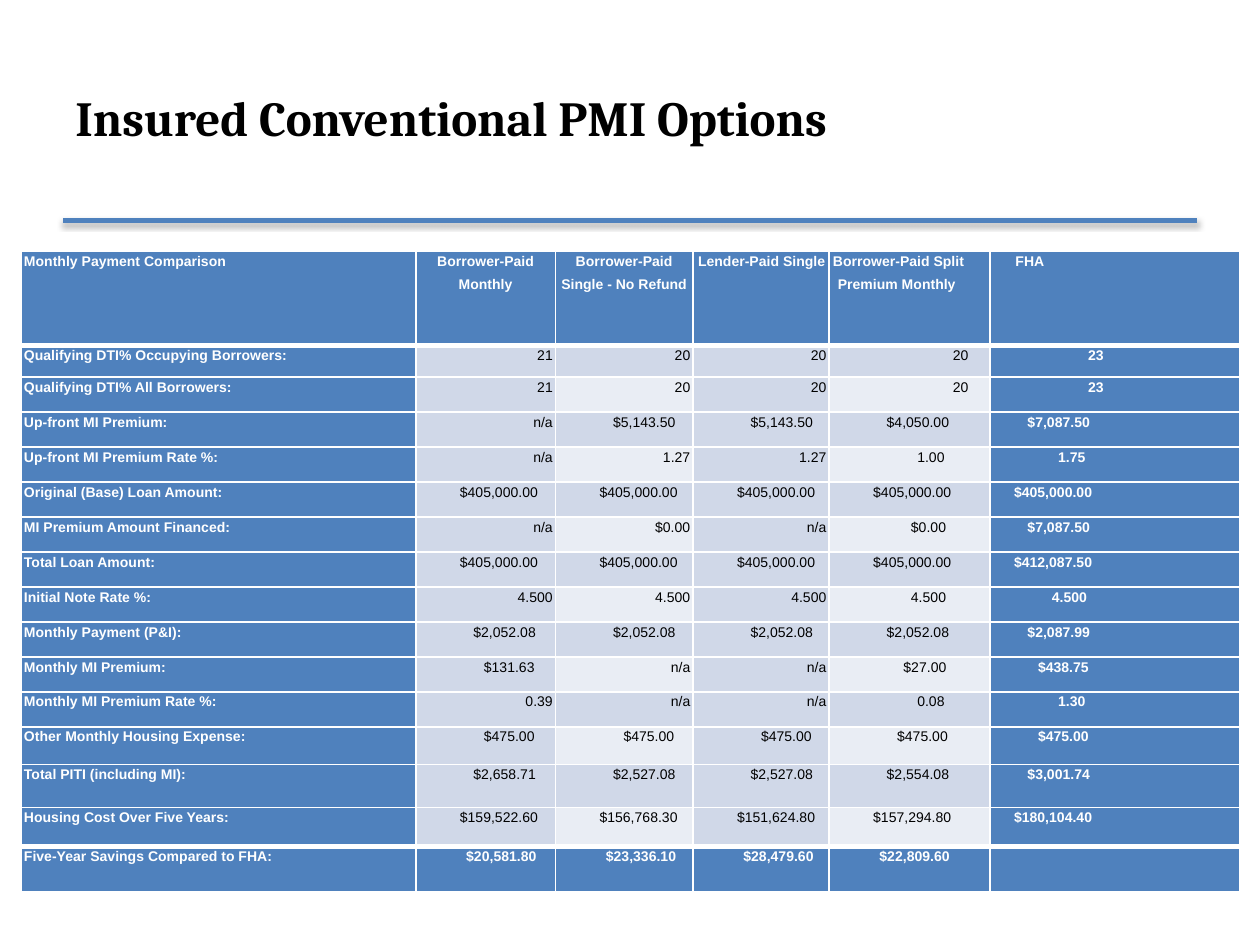
from lxml.etree import SubElement
from pptx import Presentation
from pptx.dml.color import RGBColor
from pptx.enum.shapes import MSO_CONNECTOR
from pptx.enum.text import MSO_ANCHOR, PP_ALIGN
from pptx.oxml.ns import qn
from pptx.util import Pt

BLUE = RGBColor(0x4F, 0x81, 0xBD)
BAND = RGBColor(0xD0, 0xD8, 0xE8)
LIGHT_BAND = RGBColor(0xE9, 0xED, 0xF4)
WHITE = RGBColor(0xFF, 0xFF, 0xFF)
BLACK = RGBColor(0, 0, 0)

COLUMN_WIDTHS = [225.3, 79.8, 78.6, 77.8, 92.1, 142.6]
ROW_HEIGHTS = [54, 18] + [20] * 10 + [21.6, 24.6, 22.2, 26]

COMPARISON = [
    ["Monthly Payment Comparison", "Borrower-Paid\nMonthly", "Borrower-Paid\nSingle - No Refund",
     "Lender-Paid Single", "Borrower-Paid Split\nPremium Monthly", "FHA"],
    ["Qualifying DTI% Occupying Borrowers:", "21", "20", "20", "20", "23"],
    ["Qualifying DTI% All Borrowers:", "21", "20", "20", "20", "23"],
    ["Up-front MI Premium:", "n/a", "$5,143.50", "$5,143.50", "$4,050.00", "$7,087.50"],
    ["Up-front MI Premium Rate %:", "n/a", "1.27", "1.27", "1.00", "1.75"],
    ["Original (Base) Loan Amount:"] + ["$405,000.00"] * 5,
    ["MI Premium Amount Financed:", "n/a", "$0.00", "n/a", "$0.00", "$7,087.50"],
    ["Total Loan Amount:"] + ["$405,000.00"] * 4 + ["$412,087.50"],
    ["Initial Note Rate %:"] + ["4.500"] * 5,
    ["Monthly Payment (P&I):"] + ["$2,052.08"] * 4 + ["$2,087.99"],
    ["Monthly MI Premium:", "$131.63", "n/a", "n/a", "$27.00", "$438.75"],
    ["Monthly MI Premium Rate %:", "0.39", "n/a", "n/a", "0.08", "1.30"],
    ["Other Monthly Housing Expense:"] + ["$475.00"] * 5,
    ["Total PITI (including MI):", "$2,658.71", "$2,527.08", "$2,527.08", "$2,554.08", "$3,001.74"],
    ["Housing Cost Over Five Years:", "$159,522.60", "$156,768.30", "$151,624.80",
     "$157,294.80", "$180,104.40"],
    ["Five-Year Savings Compared to FHA:", "$20,581.80", "$23,336.10", "$28,479.60",
     "$22,809.60", ""],
]
LAST_ROW = len(COMPARISON) - 1
LAST_COLUMN = len(COLUMN_WIDTHS) - 1

# Left indent that lines up amounts of each length in an option column.
AMOUNT_INDENTS = {11: 25.2, 10: 28.8, 9: 32.9, 7: 38.9, 6: 42.5, 5: 46.8, 4: 50.4}
FHA_SHIFT = 11.6
RIGHT_INDENTS = {1: 1.5, 2: 1.5, 3: 1.5, 4: 12.5, 5: 77.8}
HEADER_INDENTS = {0: [1.4], 3: [2.9], 4: [2.2, 5], 5: [14.4]}


def add_title(slide, left, top, width, height):
    box = slide.shapes.add_textbox(Pt(left), Pt(top), Pt(width), Pt(height))
    frame = box.text_frame
    frame.word_wrap = True
    frame.vertical_anchor = MSO_ANCHOR.MIDDLE
    frame.text = "Insured Conventional PMI Options"
    font = frame.paragraphs[0].runs[0].font
    font.name, font.size, font.bold = "Cambria", Pt(28), True
    font.color.rgb = BLACK


def add_rule(slide, left, top, width):
    """Draw the horizontal line under the title, with its soft shadow."""
    rule = slide.shapes.add_connector(
        MSO_CONNECTOR.STRAIGHT, Pt(left), Pt(top), Pt(left + width), Pt(top))
    rule.line.color.rgb = BLUE
    rule.line.width = Pt(3)
    effects = SubElement(rule.element.spPr, qn("a:effectLst"))
    shadow = SubElement(effects, qn("a:outerShdw"), blurRad=str(Pt(3.1)), dist=str(Pt(1.8)),
                        dir="5400000", rotWithShape="0")
    color = SubElement(shadow, qn("a:srgbClr"), val=str(BLACK))
    SubElement(color, qn("a:alpha"), val="35000")


def set_borders(cell, row):
    """Give white borders, heavy below the header and above the savings row."""
    widths = {"a:lnL": 1, "a:lnR": 1,
              "a:lnT": 3 if row in (1, LAST_ROW) else 1,
              "a:lnB": 3 if row in (0, LAST_ROW - 1) else 1}
    properties = cell._tc.get_or_add_tcPr()
    for tag, width in widths.items():
        line = SubElement(properties, qn(tag), w=str(Pt(width)))
        fill = SubElement(line, qn("a:solidFill"))
        SubElement(fill, qn("a:srgbClr"), val=str(WHITE))


def place_paragraph(paragraph, row, column, index):
    """Choose alignment and indents from the place and the length of the text."""
    properties = paragraph._p.get_or_add_pPr()
    length = len(paragraph.text)
    indent = 0
    if row == 0 and column in (1, 2):
        paragraph.alignment = PP_ALIGN.CENTER
    elif row == 0:
        indent = HEADER_INDENTS[column][index]
    elif column == 0:
        indent = HEADER_INDENTS[0][0]
    elif length <= (5 if column < 4 else 2):
        paragraph.alignment = PP_ALIGN.RIGHT
        properties.set("marR", str(Pt(RIGHT_INDENTS[column])))
    else:
        indent = AMOUNT_INDENTS[length] - (FHA_SHIFT if column == LAST_COLUMN else 0)
    properties.set("marL", str(Pt(indent)))


def fill_cell(cell, text, row, column):
    emphasized = row in (0, LAST_ROW) or column in (0, LAST_COLUMN)
    set_borders(cell, row)
    cell.fill.solid()
    if emphasized:
        cell.fill.fore_color.rgb = BLUE
    else:
        cell.fill.fore_color.rgb = LIGHT_BAND if row % 2 == column % 2 == 0 else BAND
    cell.margin_left = cell.margin_right = cell.margin_top = cell.margin_bottom = 0
    cell.text_frame.text = text
    for index, paragraph in enumerate(cell.text_frame.paragraphs):
        place_paragraph(paragraph, row, column, index)
        paragraph.line_spacing = 1.15
        if index:
            paragraph.space_before = Pt(3)
        font = paragraph.font
        font.name, font.size, font.bold = "Arial", Pt(8), emphasized
        font.color.rgb = WHITE if emphasized else BLACK


def add_comparison_table(slide, left, top):
    frame = slide.shapes.add_table(
        len(ROW_HEIGHTS), len(COLUMN_WIDTHS), Pt(left), Pt(top),
        Pt(sum(COLUMN_WIDTHS)), Pt(sum(ROW_HEIGHTS)))
    table = frame.table
    for column, width in zip(table.columns, COLUMN_WIDTHS):
        column.width = Pt(width)
    for row, height in zip(table.rows, ROW_HEIGHTS):
        row.height = Pt(height)
    for row, texts in enumerate(COMPARISON):
        for column, text in enumerate(texts):
            fill_cell(table.cell(row, column), text, row, column)


def main():
    presentation = Presentation()
    presentation.slide_width, presentation.slide_height = Pt(720), Pt(540)
    slide = presentation.slides.add_slide(presentation.slide_layouts[6])
    add_rule(slide, 36, 126, 648)
    add_title(slide, 36, 21.6, 636, 90)
    add_comparison_table(slide, 12.3, 143.5)
    presentation.save("out.pptx")


if __name__ == "__main__":
    main()
